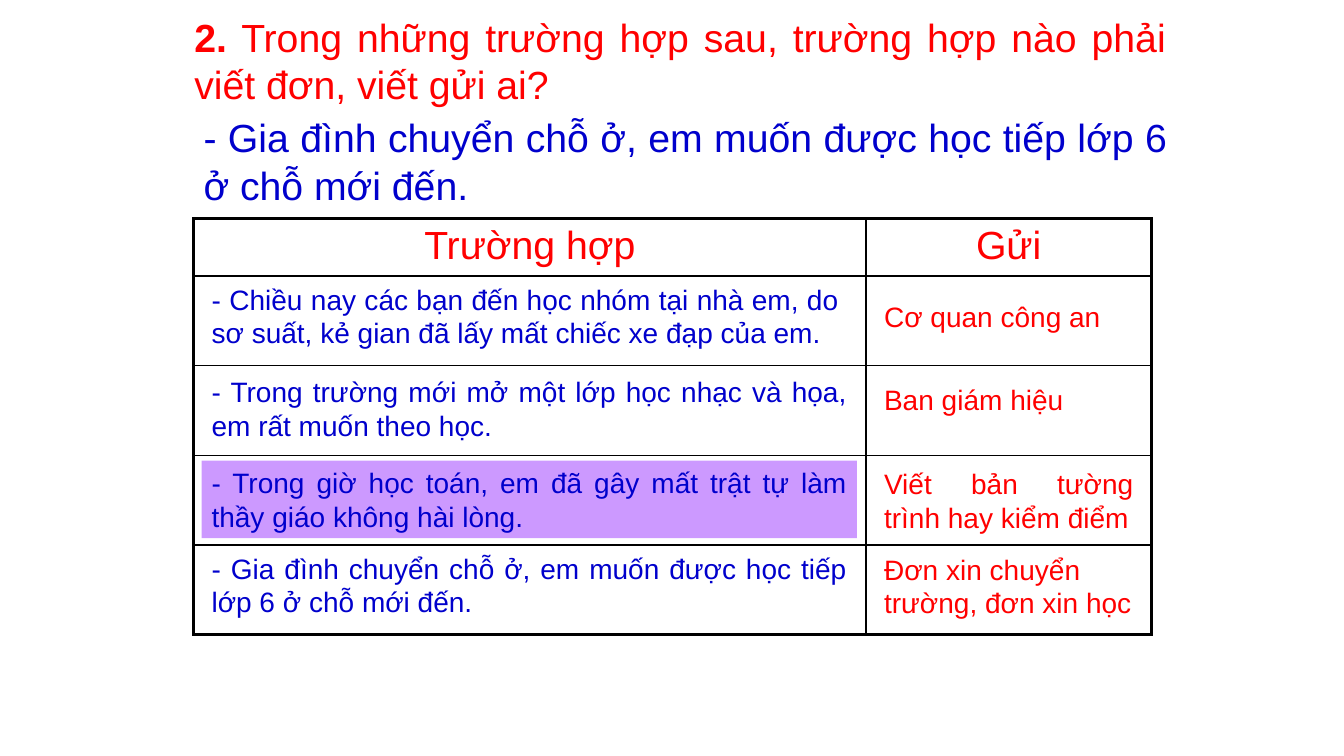
from lxml.etree import SubElement
from pptx import Presentation
from pptx.dml.color import RGBColor
from pptx.enum.shapes import MSO_SHAPE
from pptx.enum.text import MSO_ANCHOR, PP_ALIGN
from pptx.oxml.ns import qn
from pptx.util import Inches, Pt

RED = RGBColor(0xFF, 0x00, 0x00)
BLUE = RGBColor(0x00, 0x00, 0xCC)
LILAC = RGBColor(0xCC, 0x99, 0xFF)
BLACK = RGBColor(0x00, 0x00, 0x00)

HEADERS = ["Trường hợp", "Gửi"]
COLUMN_WIDTHS = [6.67, 2.83]
ROW_HEIGHTS = [0.56] + [0.89] * 4
MOVING_CASE = "- Gia đình chuyển chỗ ở, em muốn được học tiếp lớp 6 ở chỗ mới đến."
CASES = [
    (2.75, 6.42, "- Chiều nay các bạn đến học nhóm tại nhà em, do sơ suất, kẻ gian đã lấy mất chiếc xe đạp của em.", None),
    (3.67, 6.5, "- Trong trường mới mở một lớp học nhạc và họa, em rất muốn theo học.", None),
    (4.57, 6.5, "- Trong giờ học toán, em đã gây mất trật tự làm thầy giáo không hài lòng.", LILAC),
    (5.42, 6.5, MOVING_CASE, None),
]
RECIPIENTS = [
    (2.92, 2.5, 0.43, "Cơ quan công an", PP_ALIGN.LEFT),
    (3.75, 2.5, 0.43, "Ban giám hiệu", PP_ALIGN.LEFT),
    (4.58, 2.67, 0.77, "Viết bản tường trình hay kiểm điểm", PP_ALIGN.JUSTIFY),
    (5.43, 2.75, 0.77, "Đơn xin chuyển trường, đơn xin học", PP_ALIGN.LEFT),
]


class LessonSlide:
    font_name = "Arial"
    heading_size = Pt(28)
    body_size = Pt(20)
    outer_line = Pt(2.25)
    inner_line = Pt(1)

    def __init__(self, deck):
        self.page = deck.slides.add_slide(deck.slide_layouts[6])

    def style(self, paragraph, size, color, align):
        paragraph.alignment = align
        paragraph.font.name = self.font_name
        paragraph.font.size = size
        paragraph.font.color.rgb = color

    def text(self, left, top, width, height, words, size, color,
             align=PP_ALIGN.JUSTIFY, fill=None, lead=None):
        place = [Inches(length) for length in (left, top, width, height)]
        if fill is None:
            box = self.page.shapes.add_textbox(*place)
        else:
            box = self.page.shapes.add_shape(MSO_SHAPE.RECTANGLE, *place)
            box.shadow.inherit = False
            box.fill.solid()
            box.fill.fore_color.rgb = fill
            box.line.fill.background()
        frame = box.text_frame
        frame.word_wrap = True
        frame.vertical_anchor = MSO_ANCHOR.TOP
        para = frame.paragraphs[0]
        if lead:
            span = para.add_run()
            span.text = lead
            span.font.bold = True
        para.add_run().text = words
        self.style(para, size, color, align)

    def border(self, cell, side, width):
        line = SubElement(cell._tc.get_or_add_tcPr(), qn(f"a:ln{side}"), w=str(width))
        fill = SubElement(line, qn("a:solidFill"))
        SubElement(fill, qn("a:srgbClr"), val=str(BLACK))

    def table(self, left, top, widths, heights, headers):
        frame = self.page.shapes.add_table(
            len(heights), len(widths), Inches(left), Inches(top),
            Inches(sum(widths)), Inches(sum(heights)))
        table = frame.table
        table.first_row = False
        table.horz_banding = False
        for column, width in zip(table.columns, widths):
            column.width = Inches(width)
        for row, height in zip(table.rows, heights):
            row.height = Inches(height)
        last_row, last_column = len(heights) - 1, len(widths) - 1
        for row_index, row in enumerate(table.rows):
            for column_index, cell in enumerate(row.cells):
                edges = {"L": column_index == 0, "R": column_index == last_column,
                         "T": row_index == 0, "B": row_index == last_row}
                for side, is_outer in edges.items():
                    self.border(cell, side, self.outer_line if is_outer else self.inner_line)
                cell.fill.background()
        for cell, words in zip(table.rows[0].cells, headers):
            cell.text = words
            self.style(cell.text_frame.paragraphs[0], self.heading_size, RED, PP_ALIGN.CENTER)


def main():
    deck = Presentation()
    deck.slide_width = Inches(13.33)
    deck.slide_height = Inches(7.5)
    lesson = LessonSlide(deck)
    lesson.text(1.83, 0.08, 9.83, 1.03,
                " Trong những trường hợp sau, trường hợp nào phải viết đơn, viết gửi ai?",
                lesson.heading_size, RED, lead="2.")
    lesson.text(1.92, 1.08, 9.75, 1.03, MOVING_CASE, lesson.heading_size, BLUE)
    lesson.table(1.92, 2.17, COLUMN_WIDTHS, ROW_HEIGHTS, HEADERS)
    for top, width, words, fill in CASES:
        lesson.text(2, top, width, 0.77, words, lesson.body_size, BLUE, fill=fill)
    for top, width, height, words, align in RECIPIENTS:
        lesson.text(8.67, top, width, height, words, lesson.body_size, RED, align)
    deck.save("out.pptx")


if __name__ == "__main__":
    main()
